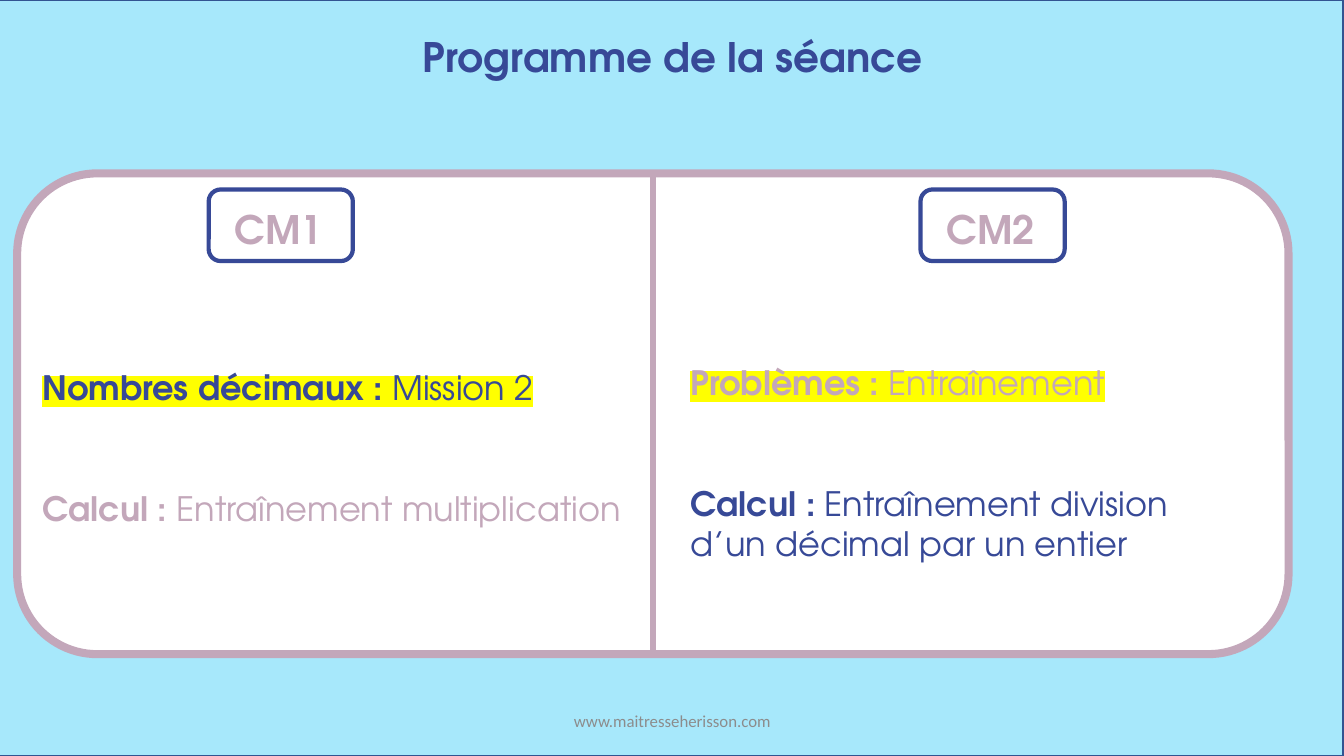
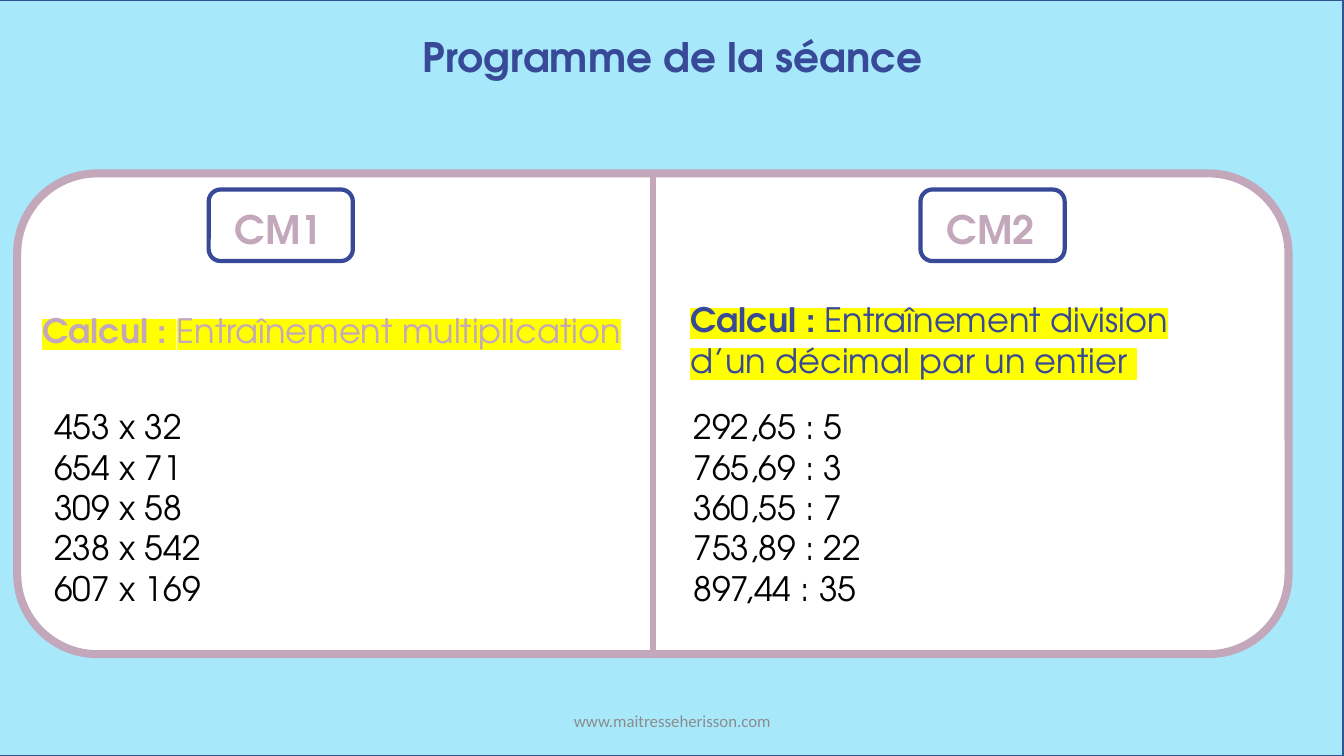
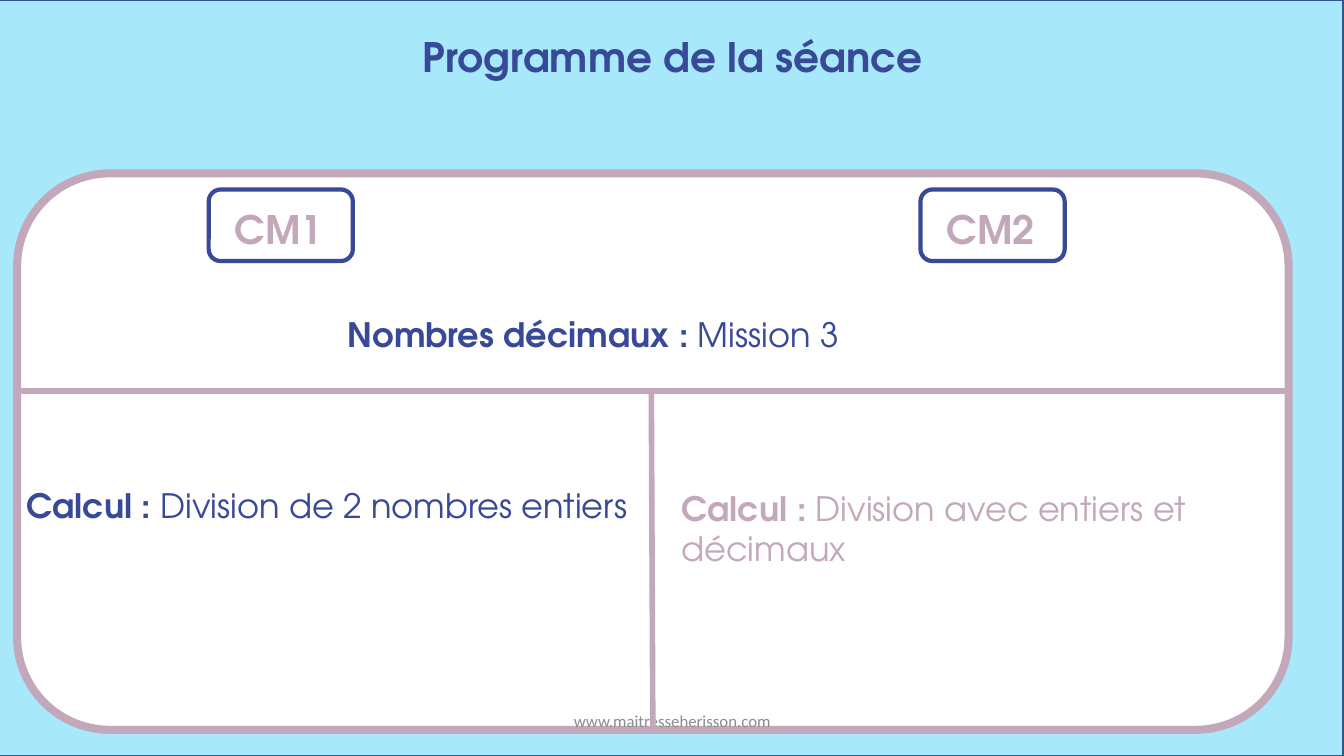
from pptx import Presentation
from pptx import util as u
from pptx.dml import color
from pptx.enum import shapes, text
from pptx.oxml import ns
from lxml import etree

COLORS = {
    "sky": "A7E8FB", "edge": "325491", "mauve": "C3A7BA", "navy": "374997",
    "white": "FFFFFF", "black": "000000", "gray": "8C8C8C", "yellow": "FFFF00",
}
FONT = "TeX Gyre Adventor"
CARD_LEFT, CARD_TOP, CARD_WIDTH = 0.17, 1.72, 12.61
LEFT_COLUMN, RIGHT_COLUMN = (0.32, 6.04), (6.75, 5.74)
TWO_LINES = 57.6


def rgb(name):
    return color.RGBColor.from_string(COLORS[name])


def inches(*lengths):
    return [u.Inches(length) for length in lengths]


def add_panel(parent, kind, area, fill, line, weight):
    panel = parent.add_shape(kind, *inches(*area))
    panel.shadow.inherit = False
    panel.fill.solid()
    panel.fill.fore_color.rgb = rgb(fill)
    panel.line.color.rgb = rgb(line)
    panel.line.width = u.Pt(weight)
    return panel


def add_span(para, words, tint, size, bold=False, marked=False, font=FONT):
    span = para.add_run()
    span.text = words
    span.font.size = u.Pt(size)
    span.font.bold = bold
    span.font.color.rgb = rgb(tint)
    if marked:
        fill = span.font._element.find(ns.qn("a:solidFill"))
        highlight = etree.Element(ns.qn("a:highlight"))
        etree.SubElement(highlight, ns.qn("a:srgbClr")).set("val", COLORS["yellow"])
        fill.addnext(highlight)
    span.font.name = font


def add_text(parent, area, paragraphs, align=text.PP_ALIGN.LEFT, gap=0):
    box = parent.add_textbox(*inches(*area))
    frame = box.text_frame
    frame.word_wrap = True
    frame.auto_size = text.MSO_AUTO_SIZE.SHAPE_TO_FIT_TEXT
    for index, spans in enumerate(paragraphs):
        para = frame.add_paragraph() if index else frame.paragraphs[0]
        para.alignment = align
        if index and gap:
            para.space_before = u.Pt(gap)
        for span in spans:
            add_span(para, **span)
    return box


def task(heading, detail, tint, marked=False):
    look = dict(tint=tint, size=24, marked=marked)
    return [dict(words=heading + " : ", bold=True, **look), dict(words=detail, **look)]


def add_tasks(page, column, top, height, *tasks):
    left, width = column
    add_text(page.shapes, (left, top, width, height), tasks, gap=TWO_LINES)


def add_exercises(page, left, exercises):
    lines = [[dict(words=line, tint="black", size=24)] for line in exercises]
    add_text(page.shapes, (left, 3.98, 5.71, 2.12), lines)


def add_badge(page, left, label):
    group = page.shapes.add_group_shape()
    add_panel(group.shapes, shapes.MSO_SHAPE.ROUNDED_RECTANGLE,
              (left, 1.88, 1.43, 0.71), "white", "navy", 3)
    add_text(group.shapes, (left + 0.16, 1.99, 1.1, 0.57),
             [[dict(words=label, tint="mauve", size=28, bold=True)]])


def add_divider(page, start, end):
    divider = page.shapes.add_connector(shapes.MSO_CONNECTOR.STRAIGHT, *inches(*start, *end))
    divider.line.color.rgb = rgb("mauve")
    divider.line.width = u.Pt(4)
    etree.SubElement(divider._element.spPr, ns.qn("a:effectLst"))
    return divider


def add_page(deck, card_height):
    page = deck.slides.add_slide(deck.slide_layouts[6])
    add_panel(page.shapes, shapes.MSO_SHAPE.RECTANGLE, (-0.01, 0, 13.33, 7.5), "sky", "edge", 1)
    card = add_panel(page.shapes, shapes.MSO_SHAPE.ROUNDED_RECTANGLE,
                     (CARD_LEFT, CARD_TOP, CARD_WIDTH, card_height), "white", "mauve", 5.75)
    center = text.PP_ALIGN.CENTER
    add_text(page.shapes, (0.01, 0.27, 13.33, 0.59),
             [[dict(words="Programme de la séance", tint="navy", size=29, bold=True)]], center)
    footer = add_text(page.shapes, (4.42, 6.95, 4.5, 0.4),
                      [[dict(words="www.maitresseherisson.com", tint="gray", size=12,
                             font="Calibri")]], center)
    footer.text_frame.auto_size = text.MSO_AUTO_SIZE.NONE
    footer.text_frame.vertical_anchor = text.MSO_ANCHOR.MIDDLE
    add_badge(page, 2.07, "CM1")
    add_badge(page, 9.13, "CM2")
    return page, card


def add_split_page(deck):
    page, card = add_page(deck, 4.77)
    divider = add_divider(page, (6.47, CARD_TOP), (6.47, 6.49))
    divider.begin_connect(card, 0)
    divider.end_connect(card, 2)
    return page


def build_program(deck):
    page = add_split_page(deck)
    add_tasks(page, LEFT_COLUMN, 3.59, 1.72,
              task("Nombres décimaux", "Mission 2", "navy", True),
              task("Calcul", "Entraînement multiplication", "mauve"))
    add_tasks(page, RIGHT_COLUMN, 3.54, 2.52,
              task("Problèmes", "Entraînement", "mauve", True),
              task("Calcul", "Entraînement division d’un décimal par un entier", "navy"))


def build_practice(deck):
    page = add_split_page(deck)
    add_tasks(page, LEFT_COLUMN, 3.03, 0.5,
              task("Calcul", "Entraînement multiplication", "mauve", True))
    add_tasks(page, RIGHT_COLUMN, 2.92, 0.91,
              task("Calcul", "Entraînement division d’un décimal par un entier ", "navy", True))
    add_exercises(page, 0.44, ["453 x 32", "654 x 71", "309 x 58", "238 x 542", "607 x 169"])
    add_exercises(page, 6.78, ["292,65 : 5", "765,69 : 3", "360,55 : 7",
                               "753,89 : 22", "897,44 : 35"])


def build_next_mission(deck):
    page, card = add_page(deck, 5.52)
    middle = 3.88
    divider = add_divider(page, (6.46, middle), (6.47, 7.24))
    divider.end_connect(card, 2)
    add_divider(page, (CARD_LEFT, middle), (CARD_LEFT + CARD_WIDTH, middle))
    add_tasks(page, (0.16, 6.29), 4.76, 0.5,
              task("Calcul", "Division de 2 nombres entiers", "navy"))
    add_tasks(page, (6.66, 5.74), 4.79, 0.91,
              task("Calcul", "Division avec entiers et décimaux", "mauve"))
    add_tasks(page, (3.35, 6.29), 3.07, 0.5,
              task("Nombres décimaux", "Mission 3", "navy"))


def main():
    deck = Presentation()
    deck.slide_width, deck.slide_height = inches(13.33, 7.5)
    build_program(deck)
    build_practice(deck)
    build_next_mission(deck)
    deck.save("out.pptx")


if __name__ == "__main__":
    main()
